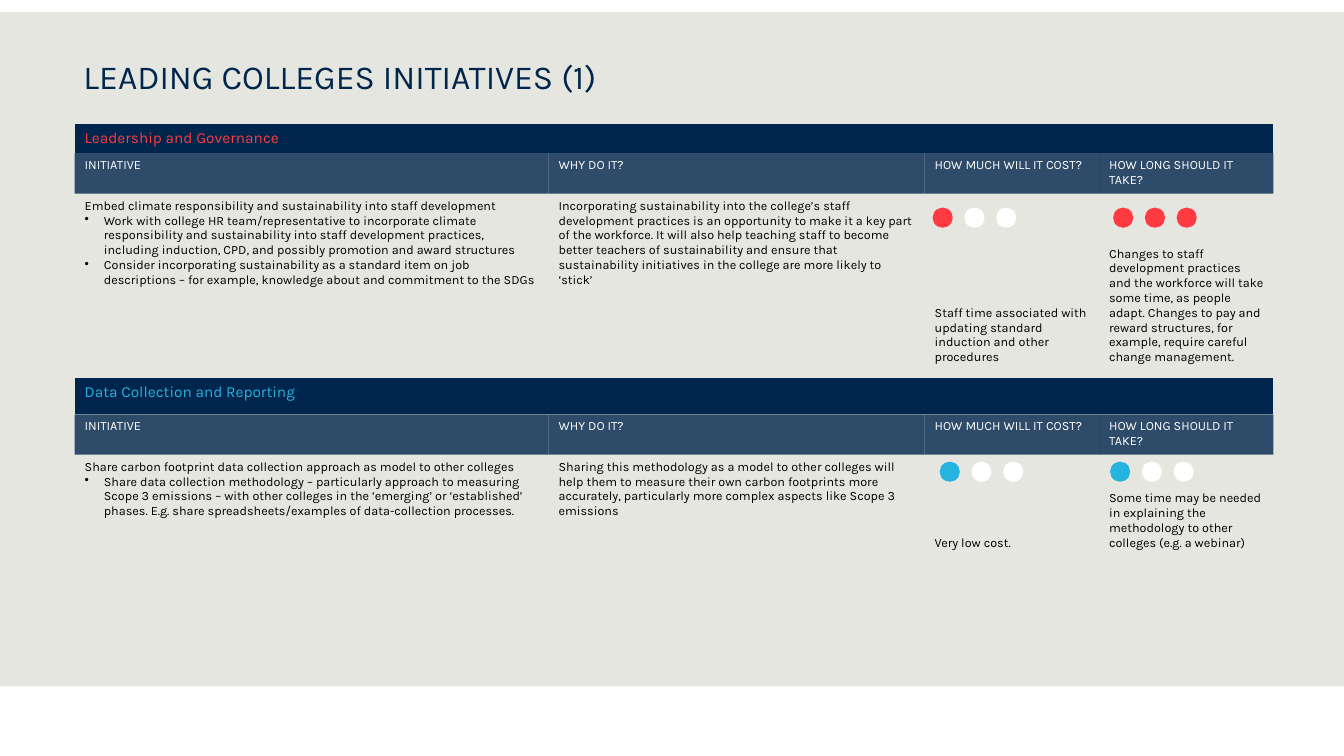
import pptx
import pptx.dml.color
import pptx.enum.shapes
import pptx.enum.text
import pptx.oxml
import pptx.oxml.ns
import pptx.util
import lxml.etree

NAVY = pptx.dml.color.RGBColor(0x00, 0x26, 0x4D)
SAND = pptx.dml.color.RGBColor(0xE6, 0xE6, 0xE1)
WHITE = pptx.dml.color.RGBColor(0xFF, 0xFF, 0xFF)
BLACK = pptx.dml.color.RGBColor(0x00, 0x00, 0x00)
RED = pptx.dml.color.RGBColor(0xFF, 0x3A, 0x40)
BLUE = pptx.dml.color.RGBColor(0x25, 0xB3, 0xE0)

GRID_COLUMNS, GRID_ROWS = 1333, 750
TABLE_LEFT = 74
TABLE_COLUMNS = (470, 373, 173, 173)
PLAIN_TABLE_STYLE = "{2D5ABB26-0587-4C30-8999-92F81FD0307C}"
HEADINGS = ("INITIATIVE", "WHY DO IT?", "HOW MUCH WILL IT COST?", "HOW LONG SHOULD IT TAKE?")
RECTANGLE = pptx.enum.shapes.MSO_SHAPE.RECTANGLE
OVAL = pptx.enum.shapes.MSO_SHAPE.OVAL
TOP = pptx.enum.text.MSO_ANCHOR.TOP
BOTTOM = pptx.enum.text.MSO_ANCHOR.BOTTOM

SECTIONS = (
    {
        "name": "Leadership and Governance",
        "color": RED,
        "top": 123,
        "rows": (29, 40, 175),
        "initiative": (
            "Embed climate responsibility and sustainability into staff development",
            "Work with college HR team/representative to incorporate climate responsibility and "
            "sustainability into staff development practices, including induction, CPD, and possibly "
            "promotion and award structures",
            "Consider incorporating sustainability as a standard item on job descriptions – for "
            "example, knowledge about and commitment to the SDGs",
        ),
        "why": "Incorporating sustainability into the college’s staff development practices is an "
               "opportunity to make it a key part of the workforce. It will also help teaching staff to "
               "become better teachers of sustainability and ensure that sustainability initiatives in "
               "the college are more likely to ‘stick’",
        "cost": "Staff time associated with updating standard induction and other procedures",
        "time": "Changes to staff development practices and the workforce will take some time, as people "
                "adapt. Changes to pay and reward structures, for example, require careful change "
                "management.",
        "dots_top": 206,
        "ratings": ((925, 1), (1104, 3)),
    },
    {
        "name": "Data Collection and Reporting",
        "color": BLUE,
        "top": 375,
        "rows": (36, 40, 100),
        "initiative": (
            "Share carbon footprint data collection approach as model to other colleges",
            "Share data collection methodology – particularly approach to measuring Scope 3 emissions – "
            "with other colleges in the ‘emerging’ or ‘established’ phases. E.g. share "
            "spreadsheets/examples of data-collection processes.",
        ),
        "why": "Sharing this methodology as a model to other colleges will help them to measure their own "
               "carbon footprints more accurately, particularly more complex aspects like Scope 3 "
               "emissions",
        "cost": "Very low cost.",
        "time": "Some time may be needed in explaining the methodology to other colleges (e.g. a webinar)",
        "dots_top": 458,
        "ratings": ((932, 1), (1101, 1)),
    },
)


class SlideBuilder:
    """Draw styled elements on one slide, measured in grid columns and rows."""

    font_name = "Karla"
    title_size, section_size, body_size = 24, 11, 9
    dot_size, dot_pitch = 20, 31.5

    def __init__(self, presentation):
        self.column = presentation.slide_width / GRID_COLUMNS
        self.row = presentation.slide_height / GRID_ROWS
        self.slide = presentation.slides.add_slide(presentation.slide_layouts[6])

    def place(self, left, top, width, height):
        return (round(left * self.column), round(top * self.row),
                round(width * self.column), round(height * self.row))

    def shape(self, kind, left, top, width, height, color):
        shape = self.slide.shapes.add_shape(kind, *self.place(left, top, width, height))
        shape.shadow.inherit = False
        shape.fill.solid()
        shape.fill.fore_color.rgb = color
        shape.line.fill.background()

    def run(self, paragraph, text, size, color):
        run = paragraph.add_run()
        run.text = text
        run.font.name = self.font_name
        run.font.size = pptx.util.Pt(size)
        run.font.color.rgb = color

    def title(self, text, left, top, width, height):
        frame = self.slide.shapes.add_textbox(*self.place(left, top, width, height)).text_frame
        frame.word_wrap = True
        frame.vertical_anchor = pptx.enum.text.MSO_ANCHOR.MIDDLE
        self.run(frame.paragraphs[0], text, self.title_size, NAVY)

    def bullet(self, paragraph):
        properties = paragraph._p.get_or_add_pPr()
        indent = pptx.util.Inches(0.19)
        properties.set("marL", str(indent))
        properties.set("indent", str(-indent))
        bullet = lxml.etree.SubElement(properties, pptx.oxml.ns.qn("a:buChar"))
        bullet.set("char", "•")

    def cell(self, cell, texts, size, color, fill, anchor=TOP, opacity=100):
        cell.fill.solid()
        cell.fill.fore_color.rgb = fill
        if opacity < 100:
            fill_color = cell._tc.tcPr.find(".//" + pptx.oxml.ns.qn("a:srgbClr"))
            alpha = lxml.etree.SubElement(fill_color, pptx.oxml.ns.qn("a:alpha"))
            alpha.set("val", str(opacity * 1000))
        cell.vertical_anchor = anchor
        for index, text in enumerate(texts):
            paragraph = cell.text_frame.add_paragraph() if index else cell.text_frame.paragraphs[0]
            if index:
                self.bullet(paragraph)
            self.run(paragraph, text, size, color)

    def table(self, section):
        rows = section["rows"]
        frame = self.slide.shapes.add_table(
            len(rows), len(TABLE_COLUMNS),
            *self.place(TABLE_LEFT, section["top"], sum(TABLE_COLUMNS), sum(rows)))
        table = frame.table
        table.first_row = table.horz_banding = False
        table._tbl.tblPr.find(pptx.oxml.ns.qn("a:tableStyleId")).text = PLAIN_TABLE_STYLE
        for column, width in zip(table.columns, TABLE_COLUMNS):
            column.width = round(width * self.column)
        for row, height in zip(table.rows, rows):
            row.height = round(height * self.row)
        table.cell(0, 0).merge(table.cell(0, len(TABLE_COLUMNS) - 1))
        self.cell(table.cell(0, 0), (section["name"],), self.section_size, section["color"], NAVY)
        for index, heading in enumerate(HEADINGS):
            self.cell(table.cell(1, index), (heading,), self.body_size, WHITE, NAVY, opacity=80)
        contents = ((section["initiative"], TOP), ((section["why"],), TOP),
                    ((section["cost"],), BOTTOM), ((section["time"],), BOTTOM))
        for index, (texts, anchor) in enumerate(contents):
            self.cell(table.cell(2, index), texts, self.body_size, BLACK, SAND, anchor)

    def rating(self, left, top, score, color):
        for index in range(3):
            self.shape(OVAL, left + index * self.dot_pitch, top, self.dot_size, self.dot_size,
                       color if index < score else WHITE)


def main():
    presentation = pptx.Presentation()
    presentation.slide_width = pptx.util.Inches(13.33)
    presentation.slide_height = pptx.util.Inches(7.5)
    builder = SlideBuilder(presentation)
    builder.shape(RECTANGLE, 0, 12, GRID_COLUMNS, 705, SAND)
    builder.shape(RECTANGLE, 0, 681, GRID_COLUMNS, 69, WHITE)
    builder.title("LEADING COLLEGES INITIATIVES (1)", 73, 47, 1187, 57)
    for section in SECTIONS:
        builder.table(section)
        for left, score in section["ratings"]:
            builder.rating(left, section["dots_top"], score, section["color"])
    presentation.save("out.pptx")


if __name__ == "__main__":
    main()
